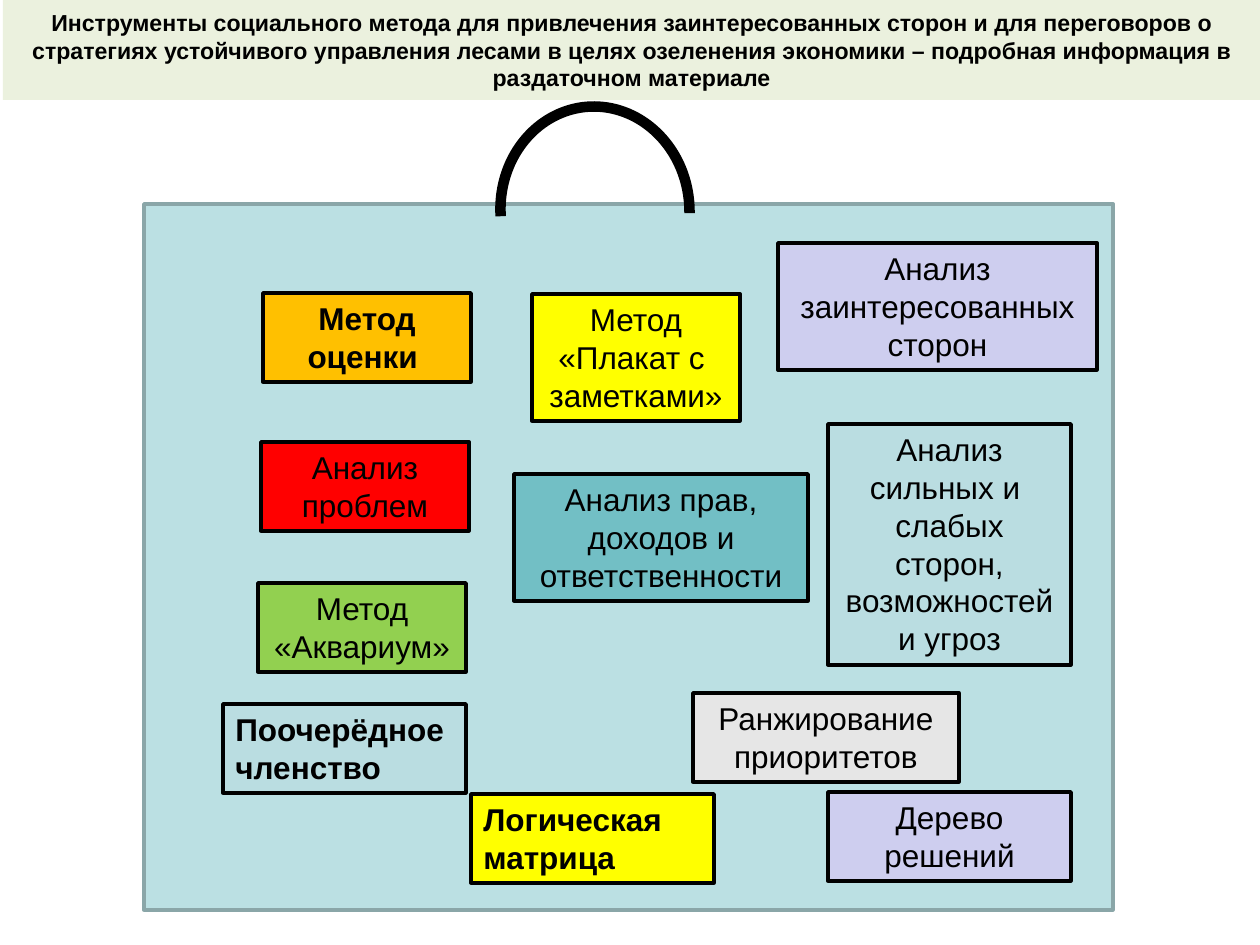
from dataclasses import dataclass

from pptx import Presentation
from pptx.dml.color import RGBColor
from pptx.enum.shapes import MSO_SHAPE
from pptx.enum.text import MSO_ANCHOR, MSO_AUTO_SIZE, PP_ALIGN
from pptx.util import Emu, Inches, Pt

RECT, ARC = MSO_SHAPE.RECTANGLE, MSO_SHAPE.ARC
TOP, MIDDLE = MSO_ANCHOR.TOP, MSO_ANCHOR.MIDDLE
LEFT, CENTER = PP_ALIGN.LEFT, PP_ALIGN.CENTER
GROW = MSO_AUTO_SIZE.SHAPE_TO_FIT_TEXT

PX = 914400 / 126
ROW, PAD = 38, 13  # height of a text line, and of the margins around the text

HUES = {
    "black": "000000",
    "bag": "BBE0E3",
    "edge": "8AA6A8",
    "title": "EBF1DE",
    "orange": "FFC000",
    "yellow": "FFFF00",
    "lilac": "CECEEF",
    "red": "FF0000",
    "teal": "72BFC5",
    "pale": "BADDE1",
    "green": "92D050",
    "grey": "E6E6E6",
}


@dataclass
class Tool:
    text: str
    x: int
    y: int
    width: int
    rows: int
    fill: str
    bold: bool = False
    align: PP_ALIGN = CENTER


TOOLS = [
    Tool("Метод оценки ", 263, 293, 208, 2, "orange", bold=True),
    Tool("Метод «Плакат с  заметками»", 532, 294, 208, 3, "yellow"),
    Tool("Анализ заинтересованных сторон", 778, 243, 319, 3, "lilac"),
    Tool("Анализ проблем", 261, 442, 208, 2, "red"),
    Tool("Анализ прав, доходов и ответственности", 514, 474, 294, 3, "teal"),
    Tool("Анализ сильных и  слабых сторон, возможностей и угроз",
         828, 424, 243, 6, "pale"),
    Tool("Метод «Аквариум»", 258, 583, 208, 2, "green"),
    Tool("Ранжирование приоритетов", 693, 693, 266, 2, "grey"),
    Tool("Дерево решений", 828, 792, 243, 2, "lilac"),
    Tool("Логическая матрица", 471, 794, 243, 2, "yellow", True, LEFT),
    Tool("Поочерёдное членство", 223, 704, 243, 2, "pale", True, LEFT),
]

TITLE = (
    "Инструменты социального метода для привлечения заинтересованных сторон "
    "и для переговоров о стратегиях устойчивого управления лесами в целях "
    "озеленения экономики – подробная информация в раздаточном материале"
)


def hue(name: str) -> RGBColor:
    return RGBColor.from_string(HUES[name])


def draw(slide, kind, x: int, y: int, w: int, h: int,
         fill: str = "", line: str = "", weight: float = 2):
    """Add a preset shape; an empty colour name means none."""
    shape = slide.shapes.add_shape(kind, *(Emu(round(n * PX)) for n in (x, y, w, h)))
    shape.shadow.inherit = False
    if fill:
        shape.fill.solid()
        shape.fill.fore_color.rgb = hue(fill)
    else:
        shape.fill.background()
    if line:
        shape.line.color.rgb = hue(line)
        shape.line.width = Pt(weight)
    else:
        shape.line.fill.background()
    return shape


def write(shape, text: str, size: float, bold: bool, align, anchor) -> None:
    frame = shape.text_frame
    frame.word_wrap = True
    frame.vertical_anchor = anchor
    para = frame.paragraphs[0]
    para.alignment = align
    run = para.add_run()
    run.text = text
    run.font.name = "Arial"
    run.font.size = Pt(size)
    run.font.bold = bold
    run.font.color.rgb = hue("black")


def add_tool(slide, tool: Tool) -> None:
    box = draw(slide, RECT, tool.x, tool.y, tool.width,
               PAD + ROW * tool.rows, tool.fill, "black")
    write(box, tool.text, 18, tool.bold, tool.align, TOP)
    box.text_frame.auto_size = GROW


def main() -> None:
    deck = Presentation()
    deck.slide_width, deck.slide_height = Inches(10), Inches(7.5)
    slide = deck.slides.add_slide(deck.slide_layouts[6])

    # Bag and its handle
    draw(slide, RECT, 144, 204, 969, 706, "bag", "edge")
    handle = draw(slide, ARC, 491, 116, 208, 189, line="black", weight=6)
    handle.adjustments[0] = 162
    handle.adjustments[1] = 57.07
    handle.rotation = 266.5

    # Tools in the bag
    for tool in TOOLS:
        add_tool(slide, tool)

    # Title band
    band = draw(slide, RECT, 3, 0, 1257, 100, "title")
    write(band, TITLE, 13.2, True, CENTER, MIDDLE)

    deck.save("out.pptx")


if __name__ == "__main__":
    main()
